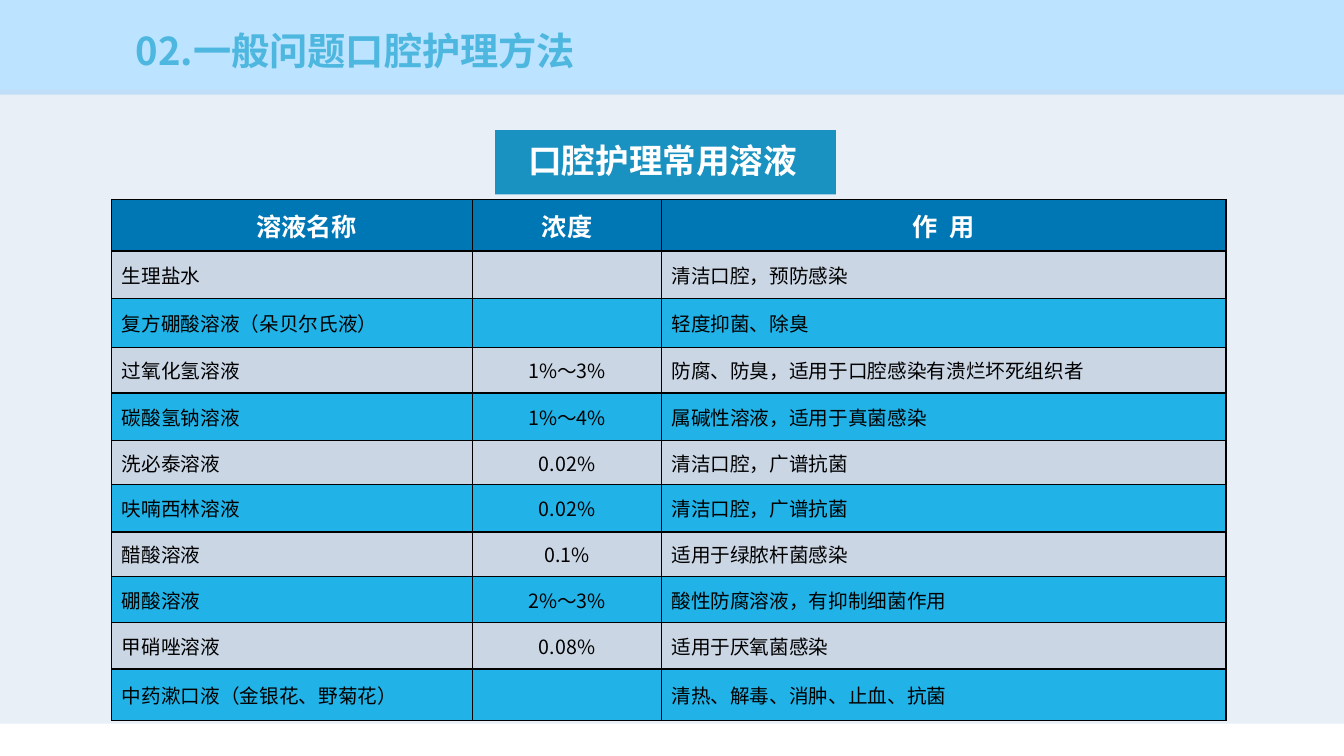
from lxml import etree
from pptx import Presentation
from pptx.dml.color import RGBColor
from pptx.enum.shapes import MSO_SHAPE
from pptx.enum.text import MSO_ANCHOR, PP_ALIGN
from pptx.oxml.ns import qn
from pptx.util import Inches, Pt

RECT = MSO_SHAPE.RECTANGLE
MIDDLE = MSO_ANCHOR.MIDDLE
TOP = MSO_ANCHOR.TOP
LEFT = PP_ALIGN.LEFT
CENTER = PP_ALIGN.CENTER

FONT = "Noto Sans CJK SC"
WHITE = RGBColor(0xFF, 0xFF, 0xFF)
BLACK = RGBColor(0x00, 0x00, 0x00)
BAND_BLUE = RGBColor(0xBC, 0xE3, 0xFF)
BODY_BLUE = RGBColor(0xC6, 0xD8, 0xEC)
TITLE_BLUE = RGBColor(0x4D, 0xB7, 0xDF)
CAPTION_BLUE = RGBColor(0x19, 0x91, 0xC1)
HEADER_BLUE = RGBColor(0x00, 0x77, 0xB5)
ROW_FILLS = (RGBColor(0x21, 0xB3, 0xE7), RGBColor(0xCB, 0xD6, 0xE5))

COLUMN_WIDTHS = (3.58, 1.87, 5.6)
ROW_HEIGHTS = (0.51, 0.47, 0.49, 0.45, 0.47, 0.44, 0.47, 0.44, 0.46, 0.46, 0.51)
SOLUTIONS = (
    ("溶液名称", "浓度", "作  用"),
    ("生理盐水", "", "清洁口腔，预防感染"),
    ("复方硼酸溶液（朵贝尔氏液）", "", "轻度抑菌、除臭"),
    ("过氧化氢溶液", "1%～3%", "防腐、防臭，适用于口腔感染有溃烂坏死组织者"),
    ("碳酸氢钠溶液", "1%～4%", "属碱性溶液，适用于真菌感染"),
    ("洗必泰溶液", "0.02%", "清洁口腔，广谱抗菌"),
    ("呋喃西林溶液", "0.02%", "清洁口腔，广谱抗菌"),
    ("醋酸溶液", "0.1%", "适用于绿脓杆菌感染"),
    ("硼酸溶液", "2%～3%", "酸性防腐溶液，有抑制细菌作用"),
    ("甲硝唑溶液", "0.08%", "适用于厌氧菌感染"),
    ("中药漱口液（金银花、野菊花）", "", "清热、解毒、消肿、止血、抗菌"),
)


def write(frame, text, size, color, bold, align=LEFT):
    frame.text = text
    paragraph = frame.paragraphs[0]
    paragraph.alignment = align
    for run in paragraph.runs:
        run.font.size = Pt(size)
        run.font.bold = bold
        run.font.color.rgb = color
        run.font.name = FONT
        etree.SubElement(run.font._element, qn("a:ea"), typeface=FONT)
    return paragraph


def add_panel(slide, left, top, width, height, color):
    panel = slide.shapes.add_shape(
        RECT, Inches(left), Inches(top), Inches(width), Inches(height))
    panel.shadow.inherit = False
    panel.fill.solid()
    panel.fill.fore_color.rgb = color
    panel.line.fill.background()
    return panel


def add_label(slide, left, top, width, height, text, size, color, anchor):
    label = slide.shapes.add_textbox(
        Inches(left), Inches(top), Inches(width), Inches(height))
    label.text_frame.word_wrap = True
    label.text_frame.vertical_anchor = anchor
    return write(label.text_frame, text, size, color, True)


def add_backdrop(slide, width):
    add_panel(slide, 0, -0.01, width, 0.95, BAND_BLUE)
    body = add_panel(slide, 0, 0.89, width, 6.29, BODY_BLUE)
    tint = body.fill._xPr.find(qn("a:solidFill"))[0]
    etree.SubElement(tint, qn("a:alpha"), val="40000")


def add_title(slide, left, top, width, height):
    title = add_label(slide, left, top, width, height,
                      "02.一般问题口腔护理方法", 27.3, TITLE_BLUE, MIDDLE)
    title.line_spacing = 0.9


def add_caption(slide, left, top, width, height):
    add_panel(slide, left, top, width, height, CAPTION_BLUE)
    add_label(slide, left + 0.23, top + 0.05, width - 0.23, 0.5,
              "口腔护理常用溶液", 24, WHITE, TOP)


def add_borders(cell):
    properties = cell._tc.get_or_add_tcPr()
    for position, side in enumerate(("lnL", "lnR", "lnT", "lnB")):
        border = etree.Element(qn(f"a:{side}"), w=str(Pt(1)))
        ink = etree.SubElement(border, qn("a:solidFill"))
        etree.SubElement(ink, qn("a:srgbClr"), val=str(BLACK))
        properties.insert(position, border)


def add_solutions(slide, left, top):
    table = slide.shapes.add_table(
        len(SOLUTIONS), len(COLUMN_WIDTHS), Inches(left), Inches(top),
        Inches(sum(COLUMN_WIDTHS)), Inches(sum(ROW_HEIGHTS))).table
    for column, width in zip(table.columns, COLUMN_WIDTHS):
        column.width = Inches(width)
    for row_index, (row, height) in enumerate(zip(table.rows, ROW_HEIGHTS)):
        row.height = Inches(height)
        header = row_index == 0
        for column_index, cell in enumerate(row.cells):
            cell.vertical_anchor = MIDDLE
            cell.fill.solid()
            cell.fill.fore_color.rgb = HEADER_BLUE if header else ROW_FILLS[row_index % 2]
            add_borders(cell)
            write(cell.text_frame, SOLUTIONS[row_index][column_index],
                  18 if header else 14, WHITE if header else BLACK, header,
                  CENTER if header or column_index == 1 else LEFT)
    table.cell(0, 0).margin_left = Inches(0.38)


def main():
    deck = Presentation()
    deck.slide_width = Inches(13.33)
    deck.slide_height = Inches(7.5)
    slide = deck.slides.add_slide(deck.slide_layouts[6])
    add_backdrop(slide, 13.33)
    add_solutions(slide, 1.11, 1.98)
    add_title(slide, 1.25, 0.11, 5.03, 0.84)
    add_caption(slide, 4.91, 1.29, 3.38, 0.64)
    deck.save("out.pptx")


if __name__ == "__main__":
    main()
